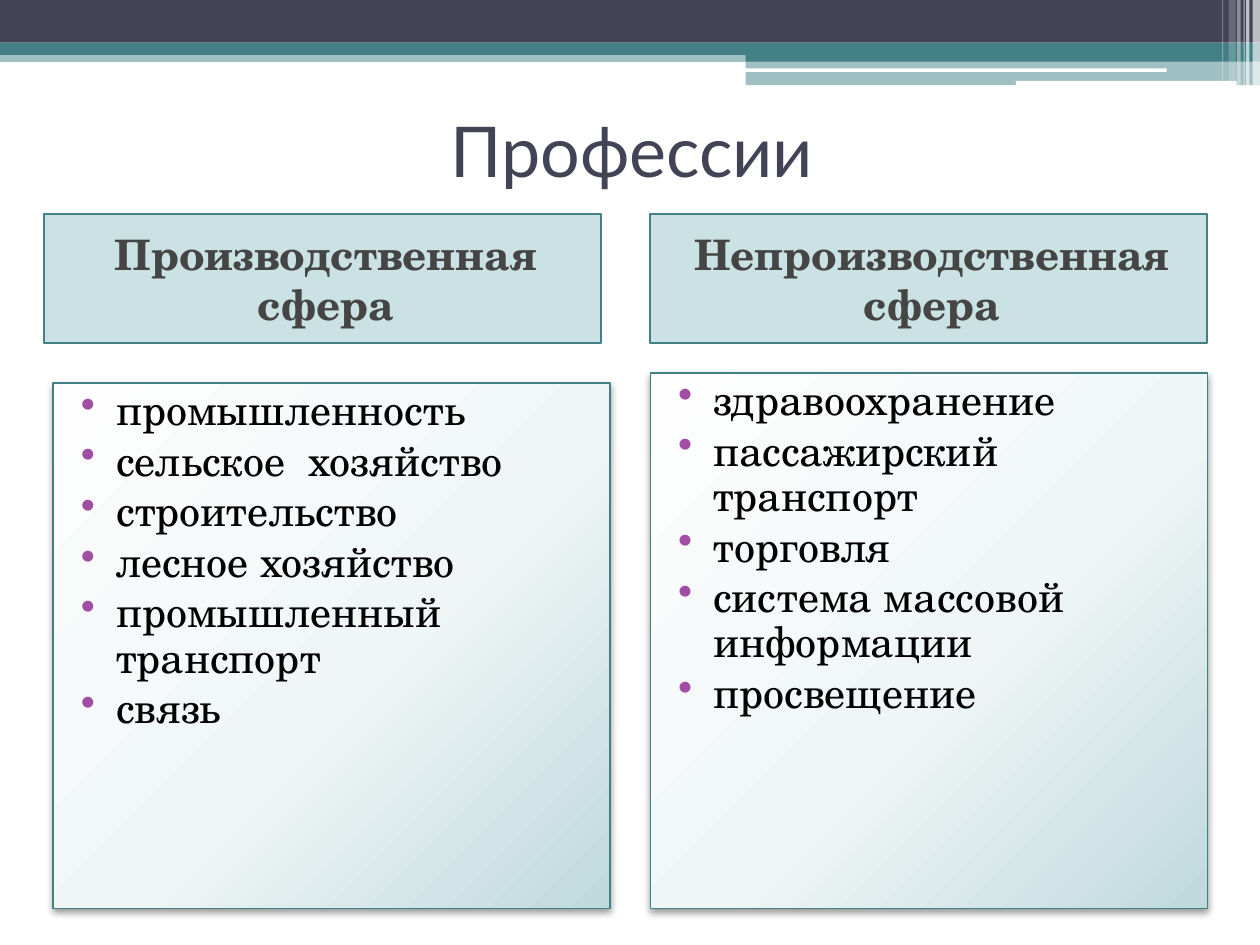
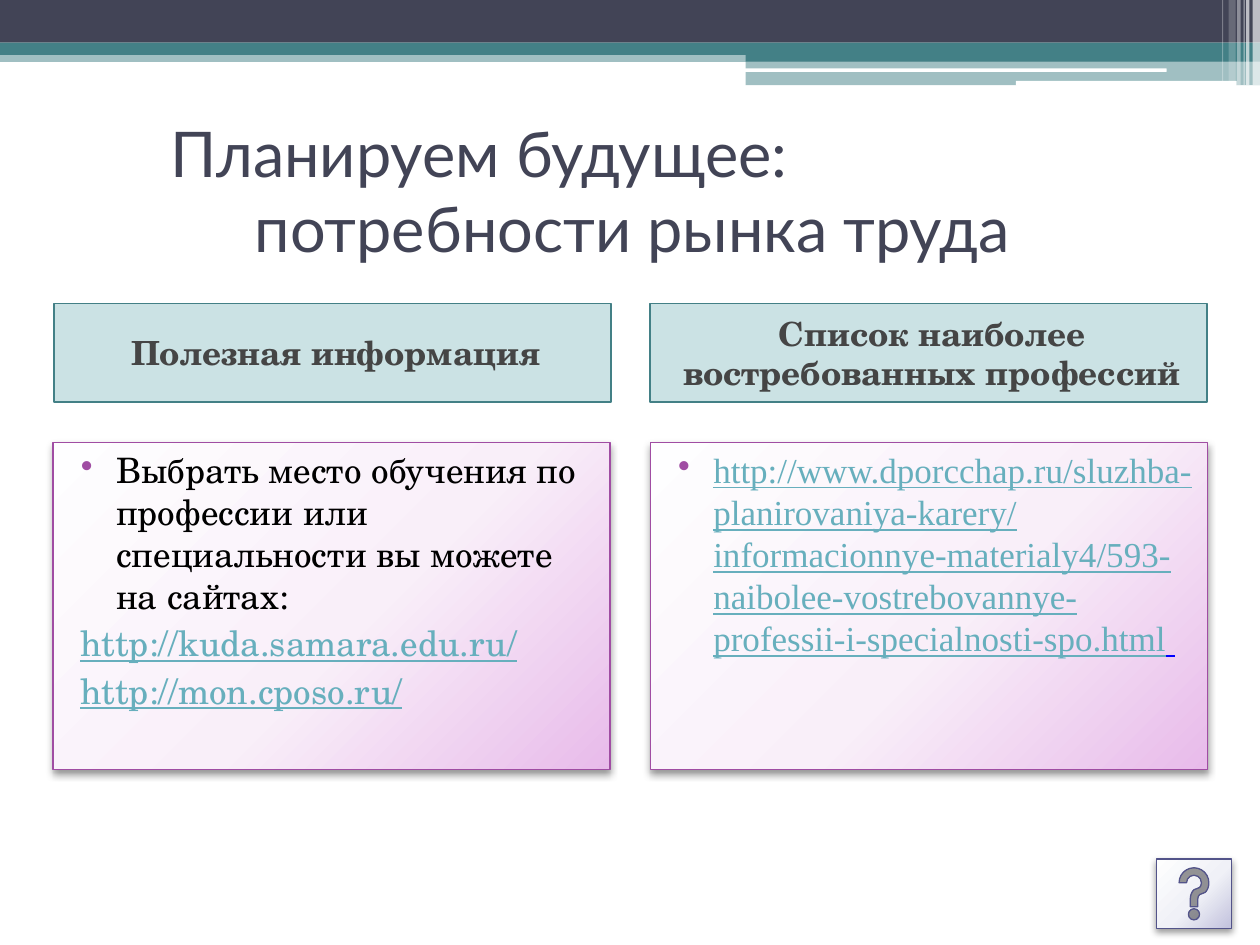
from lxml import etree
from pptx import Presentation
from pptx import util as u
from pptx.dml.color import RGBColor
from pptx.enum import shapes, text
from pptx.oxml import parse_xml
from pptx.oxml.ns import nsdecls, qn

Cm, Pt = u.Cm, u.Pt
RECT = shapes.MSO_SHAPE.RECTANGLE
ROUND = shapes.MSO_SHAPE.ROUNDED_RECTANGLE
HELP = shapes.MSO_SHAPE.ACTION_BUTTON_HELP
LEFT, CENTER = text.PP_ALIGN.LEFT, text.PP_ALIGN.CENTER

WHITE = RGBColor(0xFF, 0xFF, 0xFF)
BLACK = RGBColor(0, 0, 0)
NAVY = RGBColor(0x42, 0x44, 0x56)
TEAL = RGBColor(0x43, 0x80, 0x86)
HEADER = RGBColor(0x32, 0x8E, 0x97)
GREY = RGBColor(0x45, 0x45, 0x45)
PURPLE = RGBColor(0xA0, 0x4D, 0xA3)
INDIGO = RGBColor(0x53, 0x54, 0x8A)
LINK = RGBColor(0x67, 0xAF, 0xBD)
BLUE = RGBColor(0, 0, 0xFF)
TEAL_GRADIENT = RGBColor(0xFE, 0xFE, 0xFE), RGBColor(0xF0, 0xF6, 0xF6), RGBColor(0xBF, 0xD9, 0xDD)
PURPLE_GRADIENT = RGBColor(0xFE, 0xFE, 0xFF), RGBColor(0xF9, 0xEF, 0xF9), RGBColor(0xE8, 0xBB, 0xEA)
INDIGO_GRADIENT = RGBColor(0xFE, 0xFE, 0xFE), RGBColor(0xF0, 0xF1, 0xF7), RGBColor(0xC2, 0xC2, 0xDD)

SANS, SERIF, ROMAN = "Lato", "TeX Gyre Schola", "Times New Roman"
LEFT_X, RIGHT_X, COLUMN_W = 1.07, 13.11, 11.23

BANDS = [
    (RECT, 0, 1.02, 25.4, 0.23, TEAL, 50),
    (RECT, 0, 0, 25.4, 0.86, NAVY, 100),
    (RECT, 0, 0.86, 25.4, 0.25, TEAL, 100),
    (RECT, 15.03, 0.99, 10.37, 0.25, TEAL, 100),
    (RECT, 15.03, 1.23, 10.37, 0.49, TEAL, 50),
    (ROUND, 15.01, 1.38, 8.51, 0.07, WHITE, 100),
    (ROUND, 20.48, 1.63, 4.45, 0.1, WHITE, 100),
    (RECT, 25.25, 0, 0.15, 1.72, WHITE, 65),
    (RECT, 25.12, 0, 0.07, 1.72, WHITE, 65),
    (RECT, 25.07, 0, 0.02, 1.72, WHITE, 60),
    (RECT, 24.94, 0, 0.07, 1.72, WHITE, 40),
    (RECT, 24.77, 0, 0.14, 1.63, WHITE, 20),
    (RECT, 24.64, 0, 0.02, 1.63, WHITE, 30),
]


def box(s, kind, x, y, w, h, fill, alpha=100, line=None, weight=0.75):
    sp = s.shapes.add_shape(kind, Cm(x), Cm(y), Cm(w), Cm(h))
    sp.shadow.inherit = False
    spPr = sp._element.spPr
    if line is None:
        sp.line.fill.background()
    else:
        sp.line.color.rgb = line
        sp.line.width = Pt(weight)
    if isinstance(fill, RGBColor):
        sp.fill.solid()
        sp.fill.fore_color.rgb = fill
        if alpha < 100:
            color = spPr.find(qn("a:solidFill"))[0]
            etree.SubElement(color, qn("a:alpha"), val=str(alpha * 1000))
        return sp
    sp.fill.background()
    stops = "".join(
        f'<a:gs pos="{pos}000"><a:srgbClr val="{c}"/></a:gs>' for pos, c in zip((0, 55, 100), fill)
    )
    spPr.replace(spPr.find(qn("a:noFill")), parse_xml(
        f'<a:gradFill {nsdecls("a")} rotWithShape="1"><a:gsLst>{stops}</a:gsLst><a:path path="circle">'
        '<a:fillToRect l="-40000" t="-90000" r="140000" b="190000"/></a:path></a:gradFill>'
    ))
    spPr.find(qn("a:effectLst")).append(parse_xml(
        f'<a:outerShdw {nsdecls("a")} blurRad="{Pt(4.1)}" dist="{Pt(2)}" dir="5400000" rotWithShape="0">'
        '<a:srgbClr val="000000"><a:alpha val="40000"/></a:srgbClr></a:outerShdw>'
    ))
    return sp


def write(sp, words, size=24, font=SERIF, color=BLACK, bold=False, underline=False, align=LEFT,
          anchor=text.MSO_ANCHOR.TOP, margin=0, bullet=False, spacing=None, joined=False):
    tf = sp.text_frame
    tf.word_wrap = True
    tf.vertical_anchor = anchor
    first = not tf.text
    p = tf.paragraphs[-1] if first or joined else tf.add_paragraph()
    if not joined:
        pPr = p._p.get_or_add_pPr()
        pPr.set("marL", str(Cm(1.02 if bullet else margin)))
        pPr.set("indent", str(Cm(-0.71 if bullet else 0)))
        if bullet:
            etree.SubElement(etree.SubElement(pPr, qn("a:buClr")), qn("a:srgbClr"), val=str(PURPLE))
            etree.SubElement(pPr, qn("a:buChar"), char="•")
        p.alignment = align
        p.space_before = Pt(0 if first or font == SANS else 3)
        if spacing:
            p.line_spacing = spacing
    r = p.add_run()
    r.text = words
    r.font.size = Pt(size)
    r.font.name = font
    r.font.color.rgb = color
    r.font.bold = bold
    r.font.underline = underline


prs = Presentation()
prs.slide_width, prs.slide_height = Cm(25.4), Cm(19.05)

titles = [
    (1.52, 40, [("Профессии", CENTER, 0)]),
    (2.34, 36, [("Планируем будущее:", LEFT, 2.1), ("потребности рынка труда", LEFT, 3.8)]),
]
headers = [
    (4.32, 2.59, 24, [(0.89, "Производственная сфера"), (RIGHT_X, "Непроизводственная сфера")]),
    (6.12, 1.98, 19, [(1.09, "Полезная информация"), (RIGHT_X, "Список наиболее востребованных профессий")]),
]
for (title_y, title_size, lines), (header_y, header_h, header_size, columns) in zip(titles, headers):
    s = prs.slides.add_slide(prs.slide_layouts[6])
    for band in BANDS:
        box(s, *band)
    sp = s.shapes.add_textbox(Cm(1.09), Cm(title_y), Cm(23.29), Cm(2.97))
    for line, align, margin in lines:
        write(sp, line, size=title_size, font=SANS, color=NAVY, align=align, margin=margin,
              anchor=text.MSO_ANCHOR.MIDDLE)
    for x, header in columns:
        sp = box(s, RECT, x, header_y, COLUMN_W, header_h, HEADER, alpha=25, line=TEAL, weight=1)
        write(sp, header, size=header_size, color=GREY, bold=True, align=CENTER, margin=0.13,
              anchor=text.MSO_ANCHOR.MIDDLE)

professions, future = prs.slides
spheres = [
    (LEFT_X, 7.72, ["промышленность", "сельское  хозяйство", "строительство", "лесное хозяйство",
                    "промышленный транспорт", "связь"]),
    (RIGHT_X, 7.52, ["здравоохранение", "пассажирский транспорт", "торговля",
                     "система массовой информации", "просвещение"]),
]
for x, y, items in spheres:
    sp = box(professions, RECT, x, y, COLUMN_W, 18.31 - y, TEAL_GRADIENT, line=TEAL)
    for item in items:
        write(sp, item, bullet=True, spacing=0.9)

info, demand = [box(future, RECT, x, 8.92, COLUMN_W, 6.6, PURPLE_GRADIENT, line=PURPLE)
                for x in (LEFT_X, RIGHT_X)]
write(info, "Выбрать место обучения по профессии или специальности вы можете на сайтах:",
      size=20, bullet=True)
for site in ("http://kuda.samara.edu.ru/", "http://mon.cposo.ru/"):
    write(info, site, size=20, color=LINK, underline=True, margin=0.3)
write(demand, "http://www.dporcchap.ru/sluzhba-planirovaniya-karery/informacionnye-materialy4/"
      "593-naibolee-vostrebovannye-professii-i-specialnosti-spo.html",
      size=20, font=ROMAN, color=LINK, underline=True, bullet=True)
write(demand, " ", size=20, font=ROMAN, color=BLUE, underline=True, joined=True)
box(future, HELP, 23.32, 17.32, 1.5, 1.4, INDIGO_GRADIENT, line=INDIGO)

prs.save("out.pptx")
